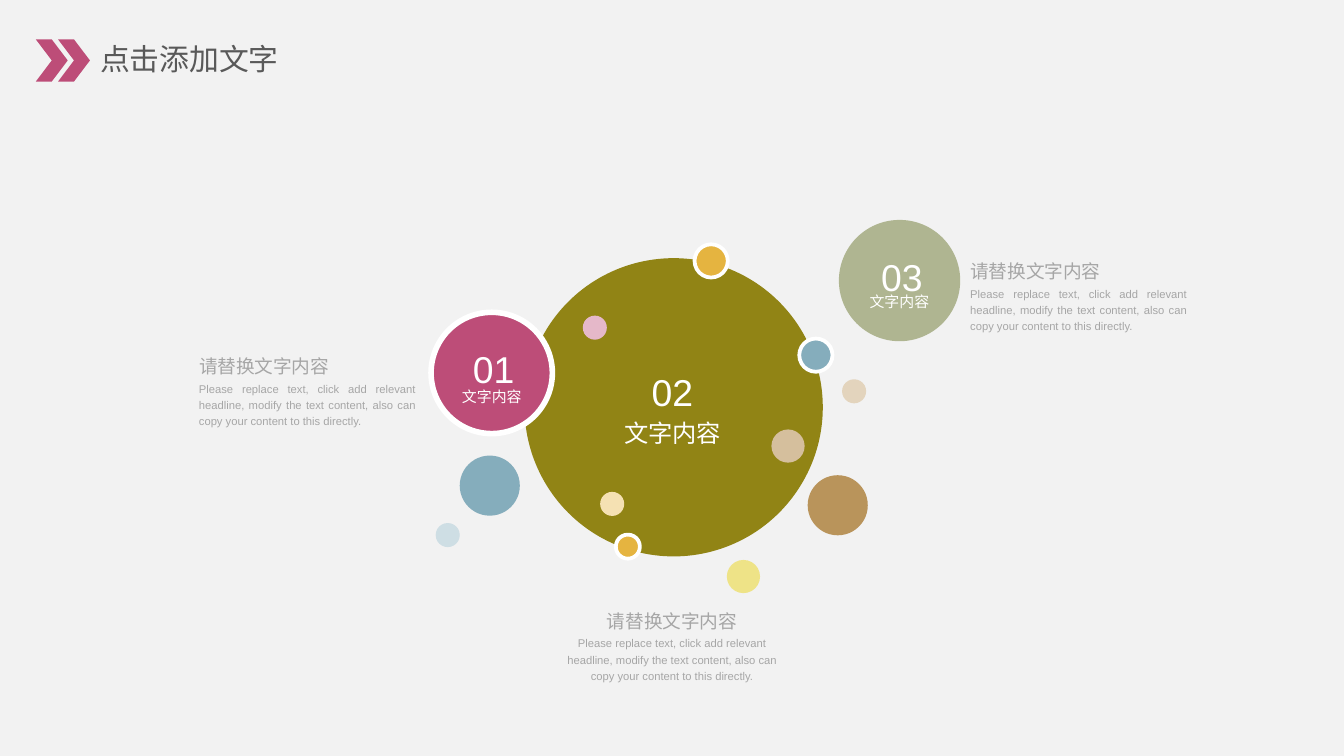
from lxml.etree import SubElement
from pptx import Presentation
from pptx.dml.color import RGBColor
from pptx.enum.shapes import MSO_SHAPE as Shape
from pptx.enum.text import MSO_ANCHOR as Anchor, MSO_AUTO_SIZE as AutoSize, PP_ALIGN as Align
from pptx.oxml.ns import qn
from pptx.util import Pt

BACKGROUND = RGBColor(0xF2, 0xF2, 0xF2)
WHITE = RGBColor(0xFF, 0xFF, 0xFF)
DARK_GRAY = RGBColor(0x59, 0x59, 0x59)
GRAY = RGBColor(0xA6, 0xA6, 0xA6)
PINK = RGBColor(0xBD, 0x4D, 0x78)
PALE_PINK = RGBColor(0xE5, 0xB8, 0xC9)
OLIVE = RGBColor(0x91, 0x84, 0x15)
SAGE = RGBColor(0xAF, 0xB5, 0x91)
GOLD = RGBColor(0xE5, 0xB4, 0x40)
PALE_GOLD = RGBColor(0xF5, 0xE1, 0xB3)
YELLOW = RGBColor(0xEE, 0xE3, 0x87)
BLUE = RGBColor(0x85, 0xAD, 0xBC)
PALE_BLUE = RGBColor(0xCE, 0xDE, 0xE4)
BROWN = RGBColor(0xB9, 0x94, 0x5B)
TAN = RGBColor(0xD5, 0xBF, 0x9D)
PALE_TAN = RGBColor(0xE3, 0xD4, 0xBD)

LATIN, CHINESE = "Arial", "Noto Sans CJK SC"
TITLE = "点击添加文字"
LABEL = "文字内容"
HEADLINE = "请替换文字内容"
BODY = ("Please replace text, click add relevant headline, modify the text content, "
        "also can copy your content to this directly.")

HUGE, LARGE, MEDIUM, SMALL, TINY = 159.8, 65, 32.2, 17.8, 12.9
# (left, top, diameter, fill, outline width)
CIRCLES = [
    (281, 138.3, HUGE, OLIVE, 0),
    (372.1, 130.9, SMALL, GOLD, 2),
    (329.9, 286.4, TINY, GOLD, 2),
    (451.1, 203.2, TINY, PALE_TAN, 0),
    (389.4, 300, SMALL, YELLOW, 0),
    (312.2, 169.1, TINY, PALE_PINK, 0),
    (230.9, 167.3, LARGE, PINK, 3),
    (413.3, 230.1, SMALL, TAN, 0),
    (246.3, 244.1, MEDIUM, BLUE, 0),
    (449.4, 117.8, LARGE, SAGE, 0),
    (428.2, 181.4, SMALL, BLUE, 2),
    (233.4, 280.2, TINY, PALE_BLUE, 0),
    (321.5, 263.5, TINY, PALE_GOLD, 0),
    (432.7, 254.6, MEDIUM, BROWN, 0),
]
# (number, number left, number top, label left, label top, label height, label size)
BADGES = [
    ("01", 247.5, 180.6, 235, 205.5, 11.5, 8),
    ("02", 343.2, 192.9, 331.8, 221.2, 18.7, 13),
    ("03", 466.2, 131.3, 453.4, 154.8, 11.5, 8),
]
# (body left, headline left, headline top, alignment)
CAPTIONS = [
    (106.6, 106.6, 187.8, Align.JUSTIFY),
    (302, 316.1, 324.2, Align.CENTER),
    (519.8, 519.8, 137, Align.JUSTIFY),
]


def style_text(box, text, size, color, align, font=LATIN, spacing=1.2):
    frame = box.text_frame
    frame.text = text
    frame.word_wrap = True
    frame.auto_size = AutoSize.NONE
    para = frame.paragraphs[0]
    para.alignment = align
    para.line_spacing = spacing
    span = para.runs[0]
    span.font.name = font
    span.font.size = Pt(size)
    span.font.color.rgb = color
    SubElement(span.font._element, qn("a:ea")).set("typeface", CHINESE)
    return para


def set_margins(frame, horizontal, vertical):
    frame.margin_left = frame.margin_right = Pt(horizontal)
    frame.margin_top = frame.margin_bottom = Pt(vertical)


def add_text(page, left, top, width, height, text, size, color, align, anchor=Anchor.TOP):
    box = page.shapes.add_textbox(Pt(left), Pt(top), Pt(width), Pt(height))
    set_margins(box.text_frame, 0, 0)
    box.text_frame.vertical_anchor = anchor
    return style_text(box, text, size, color, align)


def add_solid(page, kind, left, top, width, height, fill, outline=0):
    shape = page.shapes.add_shape(kind, Pt(left), Pt(top), Pt(width), Pt(height))
    shape.shadow.inherit = False
    shape.fill.solid()
    shape.fill.fore_color.rgb = fill
    if outline:
        shape.line.color.rgb = WHITE
        shape.line.width = Pt(outline)
    else:
        shape.line.fill.background()


def add_title(page):
    title = page.shapes.title
    title.left, title.top, title.width, title.height = Pt(48.2), Pt(19.2), Pt(141), Pt(24.5)
    set_margins(title.text_frame, 5.4, 2.7)
    title.text_frame.vertical_anchor = Anchor.TOP
    style_text(title, TITLE, 16, DARK_GRAY, Align.LEFT, CHINESE, 1.0)
    for left in (19.2, 31.1):
        add_solid(page, Shape.CHEVRON, left, 21.1, 17.1, 22.6, PINK)


def main():
    deck = Presentation()
    deck.slide_width, deck.slide_height = Pt(720), Pt(405)
    page = deck.slides.add_slide(deck.slide_layouts[5])
    page.background.fill.solid()
    page.background.fill.fore_color.rgb = BACKGROUND
    add_title(page)
    for left, top, diameter, fill, outline in CIRCLES:
        add_solid(page, Shape.OVAL, left, top, diameter, diameter, fill, outline)
    for number, left, top, label_left, label_top, height, size in BADGES:
        add_text(page, label_left, label_top, 57, height, LABEL, size, WHITE,
                 Align.CENTER, Anchor.MIDDLE)
        add_text(page, left, top, 34, 28.8, number, 20, WHITE, Align.CENTER)
    for left, headline_left, top, align in CAPTIONS:
        add_text(page, headline_left, top, 87.8, 14.4, HEADLINE, 10, GRAY, align)
        body = add_text(page, left, top + 15.5, 116, 26, BODY, 6, GRAY, align)
        body.space_before, body.space_after = Pt(1.2), Pt(6)
    deck.save("out.pptx")


if __name__ == "__main__":
    main()
